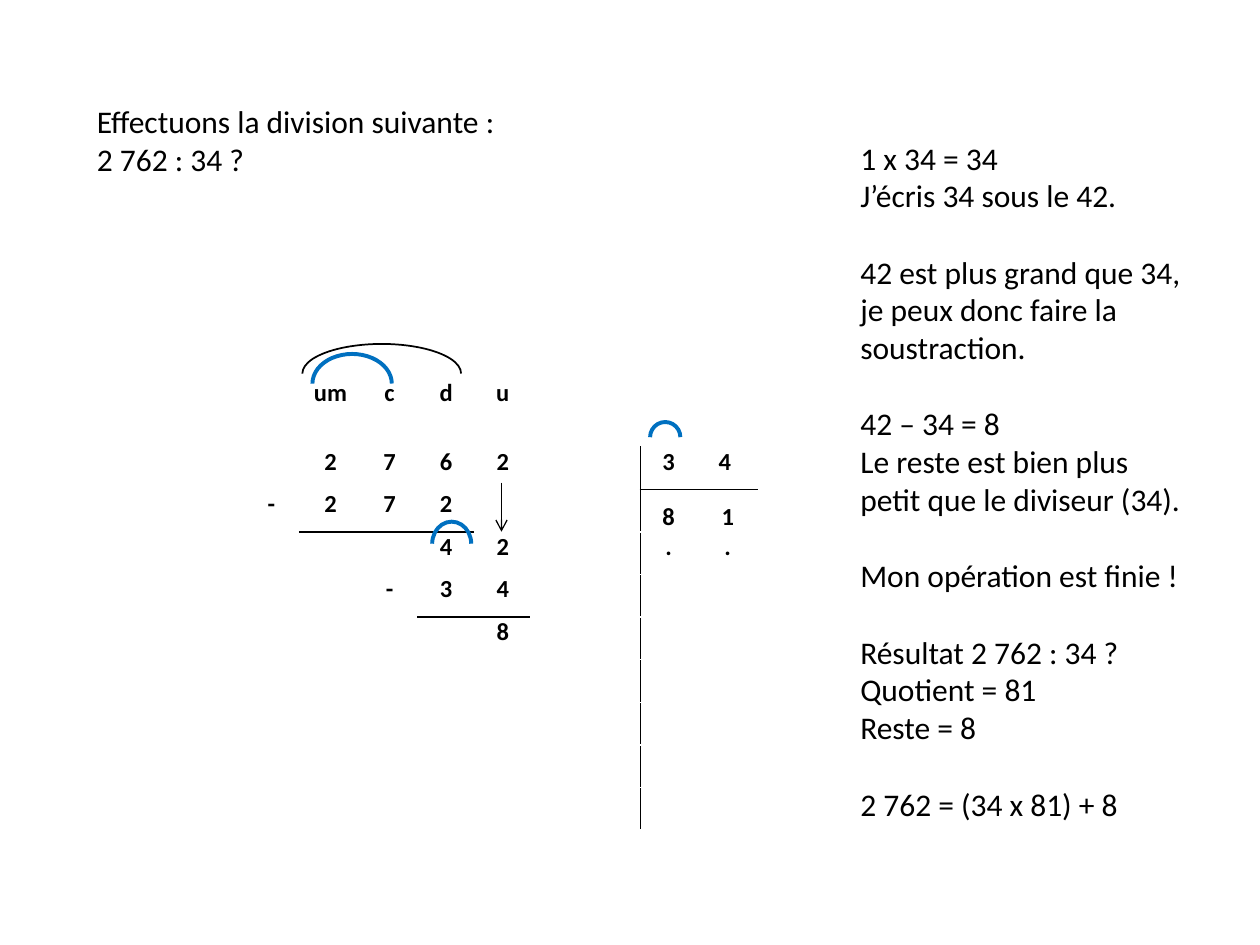
from lxml.etree import SubElement
from pptx import Presentation
from pptx.dml.color import RGBColor
from pptx.enum.shapes import MSO_CONNECTOR as CONN, MSO_SHAPE as SHAPE
from pptx.enum.text import MSO_ANCHOR as ANCHOR, MSO_AUTO_SIZE as AUTO, PP_ALIGN as ALIGN
from pptx.oxml.ns import qn
from pptx.util import Inches, Pt

COLORS = {"ink": "000000", "paper": "FFFFFF", "blue": "0070C0"}
COLS = [0.45, 0.49, 0.45, 0.45, 0.45, 0.26, 0.61, 0.45, 0.49, 0.4, 0.45]
ROWS = [0.55] + [0.34] * 9
DIGITS = [
    {1: "um", 2: "c", 3: "d", 4: "u"},
    {1: "2", 2: "7", 3: "6", 4: "2", 7: "3", 8: "4 "},
    {0: "-", 1: "2", 2: "7", 3: "2", 7: "8", 8: "1"},
    {3: "4", 4: "2", 7: ".", 8: "."},
    {2: "-", 3: "3", 4: "4"},
    {4: "8"},
]
QUOTIENT = {(2, 7), (2, 8)}
RULED_BELOW = {(1, 7), (1, 8), (2, 1), (2, 2), (2, 3), (4, 3), (4, 4)}
RULED_RIGHT = {(r, 6) for r in range(1, len(ROWS))}
STEPS = [
    ["1 x 34 = 34", "J’écris 34 sous le 42."],
    ["42 est plus grand que 34, je peux donc faire la soustraction."],
    ["42 – 34 = 8", "Le reste est bien plus petit que le diviseur (34)."],
    ["Mon opération est finie !"],
    ["Résultat 2 762 : 34 ?", "Quotient = 81", "Reste = 8"],
    ["2 762 = (34 x 81) + 8"],
]


def rgb(name):
    """Return the named colour."""
    return RGBColor.from_string(COLORS[name])


def write(p, text, size=18, bold=False, align=ALIGN.LEFT, before=0):
    """Put formatted text in a paragraph."""
    p.alignment = align
    p.space_before = Pt(before)
    r = p.add_run()
    r.text = text
    r.font.name = "Calibri"
    r.font.size = Pt(size)
    r.font.bold = bold
    r.font.color.rgb = rgb("ink")


def add_text(s, x, y, w, h, groups):
    """Add a text box with one blank line's space between groups of lines."""
    tf = s.shapes.add_textbox(Inches(x), Inches(y), Inches(w), Inches(h)).text_frame
    tf.word_wrap = True
    tf.auto_size = AUTO.SHAPE_TO_FIT_TEXT
    for g, lines in enumerate(groups):
        for i, line in enumerate(lines):
            p = tf.add_paragraph() if g or i else tf.paragraphs[0]
            write(p, line, before=22 if g and not i else 0)


def add_border(cell, side):
    """Draw a thin black border on one side of a cell."""
    ln = SubElement(cell._tc.get_or_add_tcPr(), qn("a:ln" + side), w=str(Pt(1)))
    SubElement(SubElement(ln, qn("a:solidFill")), qn("a:srgbClr"), val=COLORS["ink"])


def format_cell(cell, r, c):
    """Set the borders, fill, margins and digit of a grid cell."""
    sides = {
        "L": (r, c - 1) in RULED_RIGHT,
        "R": (r, c) in RULED_RIGHT,
        "T": (r - 1, c) in RULED_BELOW,
        "B": (r, c) in RULED_BELOW,
    }
    for side, ruled in sides.items():
        if ruled:
            add_border(cell, side)
    cell.fill.solid()
    cell.fill.fore_color.rgb = rgb("paper")
    cell.margin_left = cell.margin_right = Inches(0.07)
    cell.margin_top = cell.margin_bottom = 0
    cell.vertical_anchor = ANCHOR.BOTTOM if (r, c) in QUOTIENT else ANCHOR.TOP
    text = DIGITS[r].get(c) if r < len(DIGITS) else None
    if text:
        write(cell.text_frame.paragraphs[0], text, size=14, bold=True, align=ALIGN.CENTER)


def add_grid(s, x, y, w, h):
    """Add the table holding the long division."""
    table = s.shapes.add_table(len(ROWS), len(COLS), Inches(x), Inches(y), Inches(w), Inches(h)).table
    table.first_row = table.horz_banding = False
    for col, size in zip(table.columns, COLS):
        col.width = Inches(size * w / sum(COLS))
    for row, size in zip(table.rows, ROWS):
        row.height = Inches(size * h / sum(ROWS))
    for r in range(len(ROWS)):
        for c in range(len(COLS)):
            format_cell(table.cell(r, c), r, c)


def add_arc(s, x, y, w, h, color="blue", width=2.25):
    """Add the upper half of an ellipse."""
    arc = s.shapes.add_shape(SHAPE.ARC, Inches(x), Inches(y), Inches(w), Inches(h))
    arc.adjustments[0] = 107.935
    arc.adjustments[1] = 0
    arc.shadow.inherit = False
    arc.fill.background()
    arc.line.color.rgb = rgb(color)
    arc.line.width = Pt(width)


def add_arrow(s, x, y, length):
    """Add a downward arrow."""
    cx = s.shapes.add_connector(CONN.STRAIGHT, Inches(x), Inches(y), Inches(x), Inches(y + length))
    cx.line.color.rgb = rgb("ink")
    cx.line.width = Pt(0.75)
    SubElement(cx.line._get_or_add_ln(), qn("a:tailEnd"), type="arrow")
    SubElement(cx._element.spPr, qn("a:effectLst"))


def add_division(s, x, y, w, h):
    """Add the long division with its arcs and the lowered digit's arrow."""
    add_grid(s, x, y, w, h)
    add_arc(s, x + 0.47, y - 0.27, 1.26, 0.47, color="ink", width=1)
    add_arc(s, x + 0.55, y - 0.19, 0.63, 0.47)
    add_arc(s, x + 3.23, y + 0.35, 0.24, 0.24)
    add_arrow(s, x + 2.05, y + 0.83, 0.39)
    add_arc(s, x + 1.5, y + 1.14, 0.31, 0.35)


def main():
    """Build and save the slide."""
    prs = Presentation()
    prs.slide_width, prs.slide_height = Inches(10), Inches(7.5)
    s = prs.slides.add_slide(prs.slide_layouts[6])
    add_division(s, 1.93, 3, 4.94, 3.59)
    add_text(s, 0.67, 0.76, 4.88, 0.71, [["Effectuons la division suivante :", "2 762 : 34 ?"]])
    add_text(s, 6.73, 1.05, 2.83, 5.55, STEPS)
    prs.save("out.pptx")


if __name__ == "__main__":
    main()
